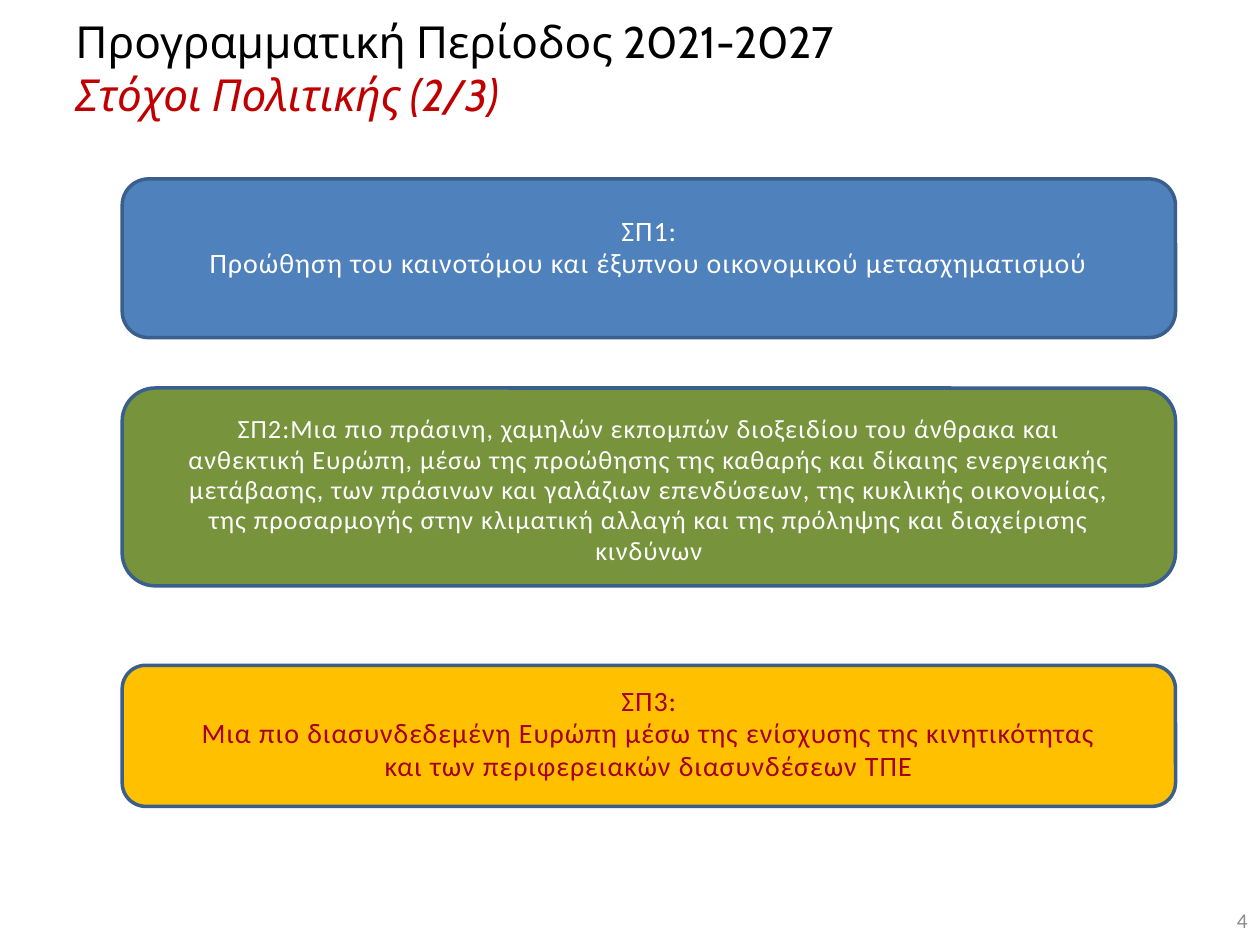
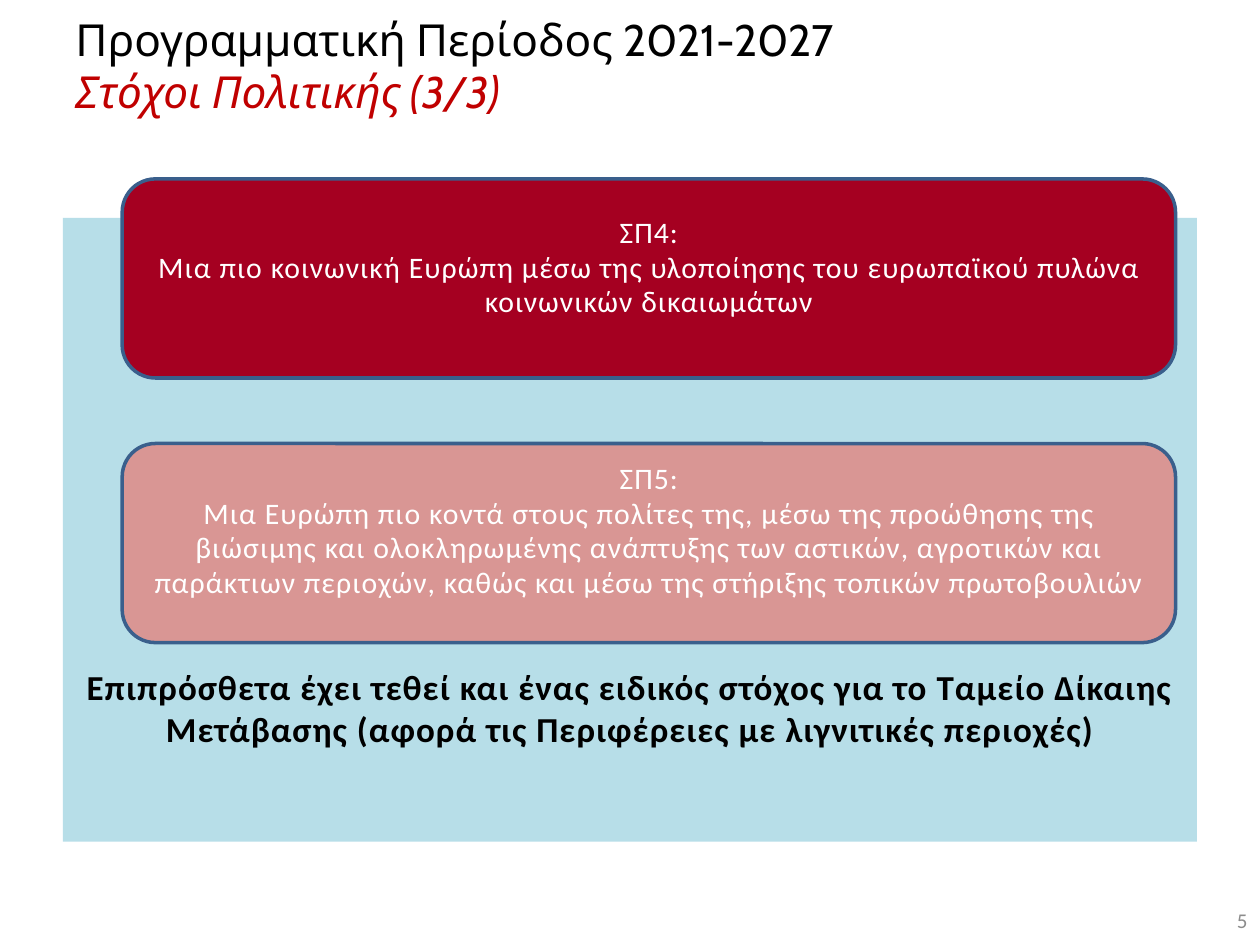
from pptx import Presentation
from pptx.dml.color import RGBColor
from pptx.enum.shapes import MSO_SHAPE
from pptx.enum.text import MSO_ANCHOR, PP_ALIGN
from pptx.util import Inches, Pt

ROUNDED, RECTANGLE = MSO_SHAPE.ROUNDED_RECTANGLE, MSO_SHAPE.RECTANGLE
TOP, MIDDLE = MSO_ANCHOR.TOP, MSO_ANCHOR.MIDDLE
LEFT, CENTER, RIGHT = PP_ALIGN.LEFT, PP_ALIGN.CENTER, PP_ALIGN.RIGHT

BLACK, WHITE, GREY = "000000", "FFFFFF", "8C8C8C"
RED, CRIMSON, OUTLINE, PALE_BLUE = "C00000", "A50021", "3A5F8C", "B7DEE8"
TITLE_FONT, BODY_FONT = "Cabin", "Calibri"
CARD_LEFT, CARD_WIDTH = 0.97, 8.36
PANEL_BOUNDS = (0.5, 1.73, 9, 4.95)
INSET = 0.05

HEADING = "Προγραμματική Περίοδος 2021-2027"

SLIDES = [
    {
        "number": 4,
        "title_top": 0.13,
        "subtitle": "Στόχοι Πολιτικής (2/3)",
        "cards": [
            {"top": 1.42, "height": 1.26, "fill": "4F81BD", "color": WHITE,
             "size": 16, "shift": -0.07, "lines": [
                 "ΣΠ1:",
                 "Προώθηση του καινοτόμου και έξυπνου οικονομικού μετασχηματισμού"]},
            {"top": 3.08, "height": 1.57, "fill": "77933C", "color": WHITE,
             "size": 15, "shift": 0.04, "lines": [
                 "ΣΠ2:Μια πιο πράσινη, χαμηλών εκπομπών διοξειδίου του άνθρακα και",
                 "ανθεκτική Ευρώπη, μέσω της προώθησης της καθαρής και δίκαιης ενεργειακής",
                 "μετάβασης, των πράσινων και γαλάζιων επενδύσεων, της κυκλικής οικονομίας,",
                 "της προσαρμογής στην κλιματική αλλαγή και της πρόληψης και διαχείρισης",
                 "κινδύνων"]},
            {"top": 5.28, "height": 1.12, "fill": "FFC000", "color": CRIMSON,
             "size": 16, "shift": 0, "lines": [
                 "ΣΠ3:",
                 "Μια πιο διασυνδεδεμένη Ευρώπη μέσω της ενίσχυσης της κινητικότητας",
                 "και των περιφερειακών διασυνδέσεων ΤΠΕ"]},
        ],
    },
    {
        "number": 5,
        "title_top": 0.11,
        "subtitle": "Στόχοι Πολιτικής (3/3)",
        "panel": "Επιπρόσθετα έχει τεθεί και ένας ειδικός στόχος για το Ταμείο Δίκαιης "
                 "Μετάβασης (αφορά τις Περιφέρειες με λιγνιτικές περιοχές)",
        "cards": [
            {"top": 1.42, "height": 1.58, "fill": CRIMSON, "color": WHITE,
             "size": 17, "shift": -0.07, "lines": [
                 "ΣΠ4:",
                 "Μια πιο κοινωνική Ευρώπη μέσω της υλοποίησης του ευρωπαϊκού πυλώνα",
                 "κοινωνικών δικαιωμάτων"]},
            {"top": 3.52, "height": 1.58, "fill": "D99694", "color": WHITE,
             "size": 17, "shift": -0.08, "lines": [
                 "ΣΠ5:",
                 "Μια Ευρώπη πιο κοντά στους πολίτες της, μέσω της προώθησης της",
                 "βιώσιμης και ολοκληρωμένης ανάπτυξης των αστικών, αγροτικών και",
                 "παράκτιων περιοχών, καθώς και μέσω της στήριξης τοπικών πρωτοβουλιών"]},
        ],
    },
]


def rgb(value):
    return RGBColor.from_string(value)


def add_text_box(page, bounds):
    return page.shapes.add_textbox(*map(Inches, bounds))


def add_filled_shape(page, kind, bounds, fill, line=None):
    shape = page.shapes.add_shape(kind, *map(Inches, bounds))
    shape.shadow.inherit = False
    shape.fill.solid()
    shape.fill.fore_color.rgb = rgb(fill)
    if line:
        shape.line.color.rgb = rgb(line)
        shape.line.width = Pt(2)
    else:
        shape.line.fill.background()
    return shape


def write(box, text, size, color, font=BODY_FONT, align=LEFT, anchor=MIDDLE,
          bold=False, tracking=0):
    frame = box.text_frame
    frame.text = text
    frame.word_wrap = True
    frame.vertical_anchor = anchor
    for para in frame.paragraphs:
        para.alignment = align
        for span in para.runs:
            span.font.name = font
            span.font.size = Pt(size)
            span.font.bold = bold
            span.font.color.rgb = rgb(color)
            if tracking:
                span._r.get_or_add_rPr().set("spc", str(tracking))
    return frame


def add_title(page, top, subtitle):
    box = add_text_box(page, (0.5, top, 9, 0.81))
    frame = write(box, f"{HEADING}\v{subtitle}", 25.2, BLACK, TITLE_FONT)
    span = frame.paragraphs[0].runs[-1]
    span.font.italic = True
    span.font.color.rgb = rgb(RED)


def add_panel(page, text):
    panel = add_filled_shape(page, RECTANGLE, PANEL_BOUNDS, PALE_BLUE)
    frame = write(panel, text, 20, BLACK, align=CENTER, anchor=TOP,
                  bold=True, tracking=60)
    frame.margin_top = Inches(3.55)


def add_card(page, card):
    bounds = (CARD_LEFT, card["top"], CARD_WIDTH, card["height"])
    shape = add_filled_shape(page, ROUNDED, bounds, card["fill"], OUTLINE)
    frame = write(shape, "\n".join(card["lines"]), card["size"], card["color"],
                  align=CENTER, tracking=60)
    frame.margin_left = frame.margin_right = Inches(INSET)
    frame.margin_top = Inches(INSET + max(0, 2 * card["shift"]))
    frame.margin_bottom = Inches(INSET + max(0, -2 * card["shift"]))
    for index, para in enumerate(frame.paragraphs):
        para.line_spacing = 0.8
        para.space_before = Pt(0.2 * card["size"] if index else 0)


def add_page_number(page, number):
    box = add_text_box(page, (9.33, 7.1, 0.67, 0.4))
    write(box, str(number), 12, GREY, align=RIGHT)


def main():
    deck = Presentation()
    deck.slide_width, deck.slide_height = Inches(10), Inches(7.5)
    for content in SLIDES:
        page = deck.slides.add_slide(deck.slide_layouts[6])
        if "panel" in content:
            add_panel(page, content["panel"])
        add_title(page, content["title_top"], content["subtitle"])
        for card in content["cards"]:
            add_card(page, card)
        add_page_number(page, content["number"])
    deck.save("out.pptx")


if __name__ == "__main__":
    main()
